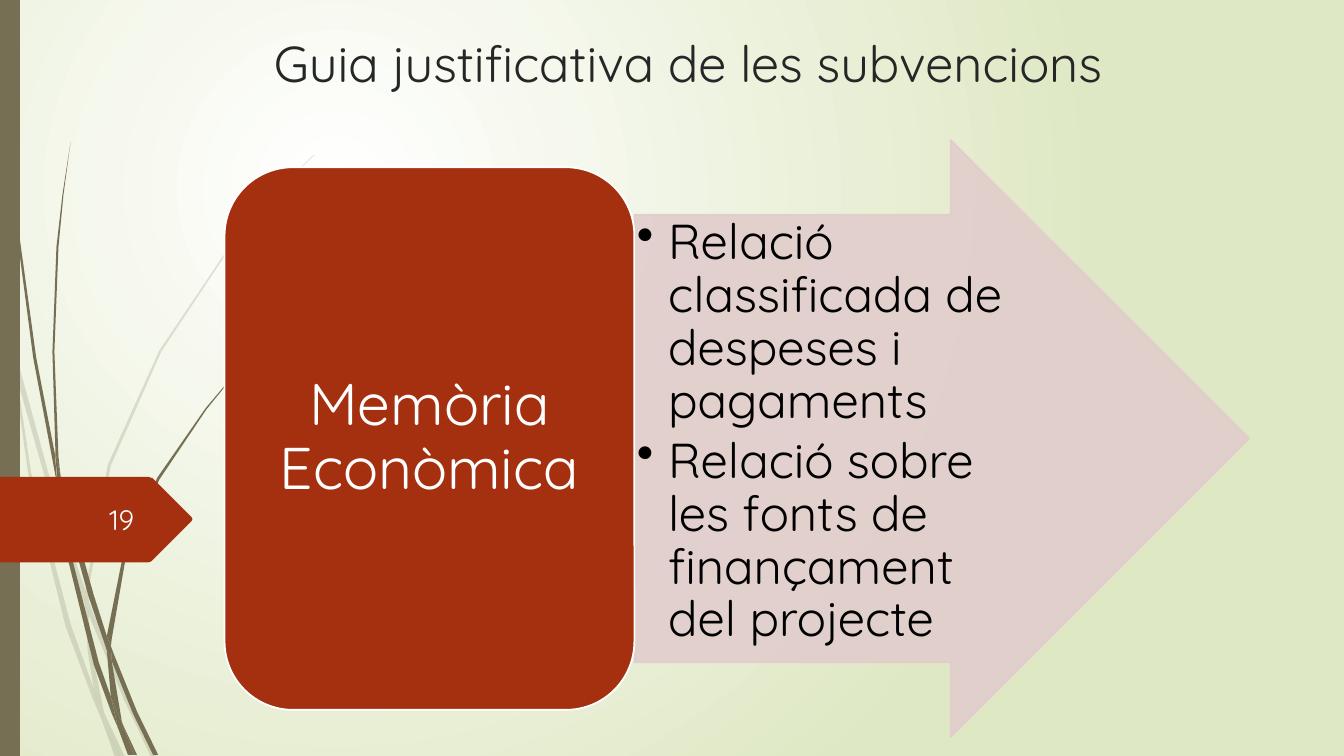
from lxml import etree
from pptx import Presentation
from pptx.dml.color import RGBColor
from pptx.enum.shapes import MSO_SHAPE
from pptx.enum.text import MSO_ANCHOR, PP_ALIGN
from pptx.oxml.ns import qn
from pptx.util import Cm, Pt

RECTANGLE, CARD, ARROW = MSO_SHAPE.RECTANGLE, MSO_SHAPE.ROUNDED_RECTANGLE, MSO_SHAPE.RIGHT_ARROW
TOP, MIDDLE, BOTTOM = MSO_ANCHOR.TOP, MSO_ANCHOR.MIDDLE, MSO_ANCHOR.BOTTOM
LEFT, CENTER, RIGHT = PP_ALIGN.LEFT, PP_ALIGN.CENTER, PP_ALIGN.RIGHT

FONT = "Quicksand"
OLIVE, RUST, PINK = "766F54", "A53010", "E1CDCC"
WHITE, BLACK = "FFFFFF", "000000"
OUTLINE_UNIT = Cm(0.0254)

# Outline corners, in outline units from the top left of the slide
PALE_GRASS = [
    [(11, 350), (9, 322), (0, 282), (0, 299), (10, 344)],
    [(58, 522), (84, 599), (85, 586), (62, 520), (14, 345), (17, 376)],
    [(92, 607), (88, 596), (88, 610), (123, 694), (150, 751), (155, 751), (127, 692)],
    [(119, 751), (124, 751), (105, 711)],
    [(93, 683), (70, 619), (31, 469), (17, 376), (11, 350), (28, 470), (65, 621),
     (92, 693), (101, 714), (99, 707)],
    [(84, 599), (87, 646), (93, 683), (96, 692), (105, 711), (103, 706), (91, 646),
     (88, 610), (88, 608)],
    [(88, 584), (110, 462), (160, 349), (229, 245), (268, 198), (290, 175), (312, 154),
     (312, 153), (289, 175), (268, 197), (228, 244), (158, 348), (107, 461), (85, 584),
     (85, 586), (88, 596)],
    [(101, 714), (114, 751), (119, 751)],
    [(88, 608), (88, 610), (88, 596), (85, 586), (84, 599)],
    [(96, 692), (93, 683), (99, 707), (101, 714), (119, 751), (105, 711)],
]
DARK_GRASS = [
    [(7, 110), (17, 233), (33, 355), (56, 477), (57, 481), (55, 457), (55, 453), (36, 355),
     (19, 232), (8, 109), (5, 48), (4, 0), (3, 0), (4, 48)],
    [(88, 592), (106, 645), (106, 633), (106, 631), (93, 590), (60, 472), (64, 505)],
    [(113, 649), (110, 641), (111, 656), (132, 708), (152, 749), (157, 749), (136, 706)],
    [(110, 691), (98, 657), (72, 556), (64, 505), (57, 477), (68, 557), (93, 659),
     (111, 708), (117, 722), (116, 717)],
    [(60, 472), (58, 453), (54, 349), (58, 245), (63, 193), (70, 141), (62, 193),
     (56, 245), (52, 349), (55, 449)],
    [(133, 749), (136, 749), (122, 719)],
    [(57, 477), (64, 505), (60, 472), (55, 449), (55, 453)],
    [(111, 633), (125, 552), (158, 476), (205, 406), (231, 374), (245, 359), (261, 344),
     (260, 344), (245, 358), (231, 373), (204, 405), (156, 474), (122, 551), (106, 631),
     (110, 641)],
    [(117, 722), (127, 749), (131, 749)],
    [(106, 645), (110, 691), (116, 706), (122, 719), (121, 716), (111, 656), (109, 651)],
    [(106, 645), (109, 651), (111, 656), (110, 641), (106, 631), (106, 633)],
    [(116, 706), (110, 691), (116, 717), (117, 722), (130, 749), (133, 749), (122, 719)],
]
NUMBER_TAG = [(147, 558), (150, 557), (151, 556), (190, 517), (191, 515), (190, 513),
              (151, 474), (150, 474), (147, 473), (0, 473), (0, 558)]


def rgb(color):
    return RGBColor.from_string(color)


def set_opacity(fill_format_element, percent):
    for color in fill_format_element.iter(qn("a:srgbClr")):
        etree.SubElement(color, qn("a:alpha"), val=str(percent * 1000))


def paint(shape, fill, line=None):
    shape.shadow.inherit = False
    shape.fill.solid()
    shape.fill.fore_color.rgb = rgb(fill)
    if line:
        shape.line.color.rgb = rgb(line)
        shape.line.width = Pt(1.25)
    else:
        shape.line.fill.background()


def add_outline(slide, points, fill, opacity=100):
    builder = slide.shapes.build_freeform(*points[0], scale=OUTLINE_UNIT)
    builder.add_line_segments(points[1:], close=True)
    shape = builder.convert_to_shape()
    paint(shape, fill)
    if opacity < 100:
        set_opacity(shape._element.spPr, opacity)


def write(shape, texts, size, color, align, anchor, margins=(0.25, 0.13), **spacing):
    frame = shape.text_frame
    horizontal, vertical = (Cm(margin) for margin in margins)
    frame_format = {"word_wrap": True, "vertical_anchor": anchor,
                    "margin_left": horizontal, "margin_right": horizontal,
                    "margin_top": vertical, "margin_bottom": vertical}
    for name, value in frame_format.items():
        setattr(frame, name, value)
    for index, text in enumerate(texts):
        paragraph = frame.add_paragraph() if index else frame.paragraphs[0]
        for name, value in {"alignment": align, **spacing}.items():
            setattr(paragraph, name, value)
        run = paragraph.add_run()
        run.text = text
        for name, value in {"name": FONT, "size": Pt(size)}.items():
            setattr(run.font, name, value)
        run.font.color.rgb = rgb(color)


def add_bullets(shape, indent):
    for paragraph in shape.text_frame.paragraphs:
        properties = paragraph._p.get_or_add_pPr()
        properties.set("marL", str(indent))
        properties.set("indent", str(-indent))
        etree.SubElement(properties, qn("a:buChar"), char="•")


def set_background(slide):
    """Fill with a circular gradient centred on the upper left quarter."""
    fill = slide.background.fill
    fill.gradient()
    for stop, color, position in zip(fill.gradient_stops, (WHITE, "DFE8C4"), (0, 1)):
        stop.color.rgb = rgb(color)
        stop.position = position
    gradient = next(slide._element.iter(qn("a:gradFill")))
    gradient.remove(gradient.find(qn("a:lin")))
    circle = etree.SubElement(gradient, qn("a:path"), path="circle")
    etree.SubElement(circle, qn("a:fillToRect"), l="50000", t="50000", r="100000", b="100000")


def add_side_decoration(slide, height):
    for blade in PALE_GRASS:
        add_outline(slide, blade, OLIVE, 20)
    for blade in DARK_GRASS:
        add_outline(slide, blade, OLIVE)
    paint(slide.shapes.add_shape(RECTANGLE, 0, 0, Cm(0.5), height), OLIVE)
    add_outline(slide, NUMBER_TAG, RUST)


def add_label(slide, box, text, *style):
    label = slide.shapes.add_textbox(*map(Cm, box))
    write(label, [text], *style)


def add_arrow_diagram(slide, left, top, width, height, heading, items):
    """Place a heading card on the left, with an arrow listing the items beside it."""
    card_width = width * 0.4
    card_height = height / 1.1
    arrow = slide.shapes.add_shape(ARROW, Cm(left + card_width), Cm(top),
                                   Cm(width - card_width), Cm(height))
    arrow.adjustments[0] = 0.75
    arrow.adjustments[1] = 0.5
    paint(arrow, PINK, PINK)
    set_opacity(arrow._element.spPr, 90)
    write(arrow, items, 35, BLACK, LEFT, TOP, (0.06, 0.06),
          line_spacing=0.9, space_after=Pt(5))
    add_bullets(arrow, Cm(0.79))

    card = slide.shapes.add_shape(CARD, Cm(left), Cm(top + (height - card_height) / 2),
                                  Cm(card_width), Cm(card_height))
    paint(card, RUST, WHITE)
    write(card, [heading], 42, WHITE, CENTER, MIDDLE, (0.43, 0.23), line_spacing=0.9)


def main():
    presentation = Presentation()
    presentation.slide_width = Cm(33.87)
    presentation.slide_height = Cm(19.05)
    slide = presentation.slides.add_slide(presentation.slide_layouts[6])
    set_background(slide)
    add_side_decoration(slide, presentation.slide_height)
    add_label(slide, (1.47, 12.57, 2.16, 1.02), "19", 20, "FEFFFF", RIGHT, MIDDLE)
    add_label(slide, (1.73, 0.74, 31.22, 1.73), "Guia justificativa de les subvencions",
              36, "262626", CENTER, BOTTOM)
    add_arrow_diagram(slide, 5.66, 3.53, 25.82, 15.04, "Memòria Econòmica",
                      ["Relació classificada de despeses i pagaments",
                       "Relació sobre les fonts de finançament del projecte"])
    presentation.save("out.pptx")


if __name__ == "__main__":
    main()
